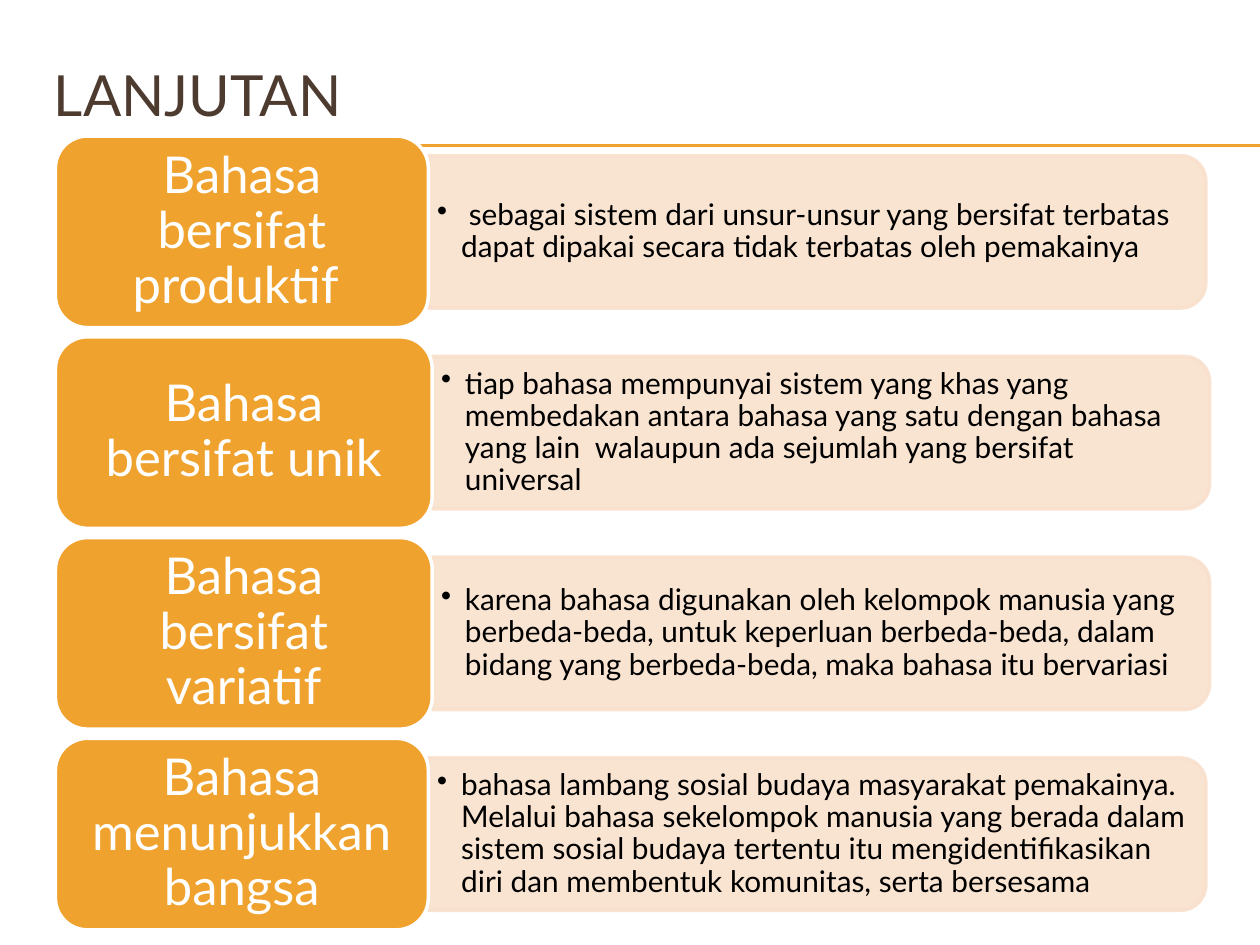
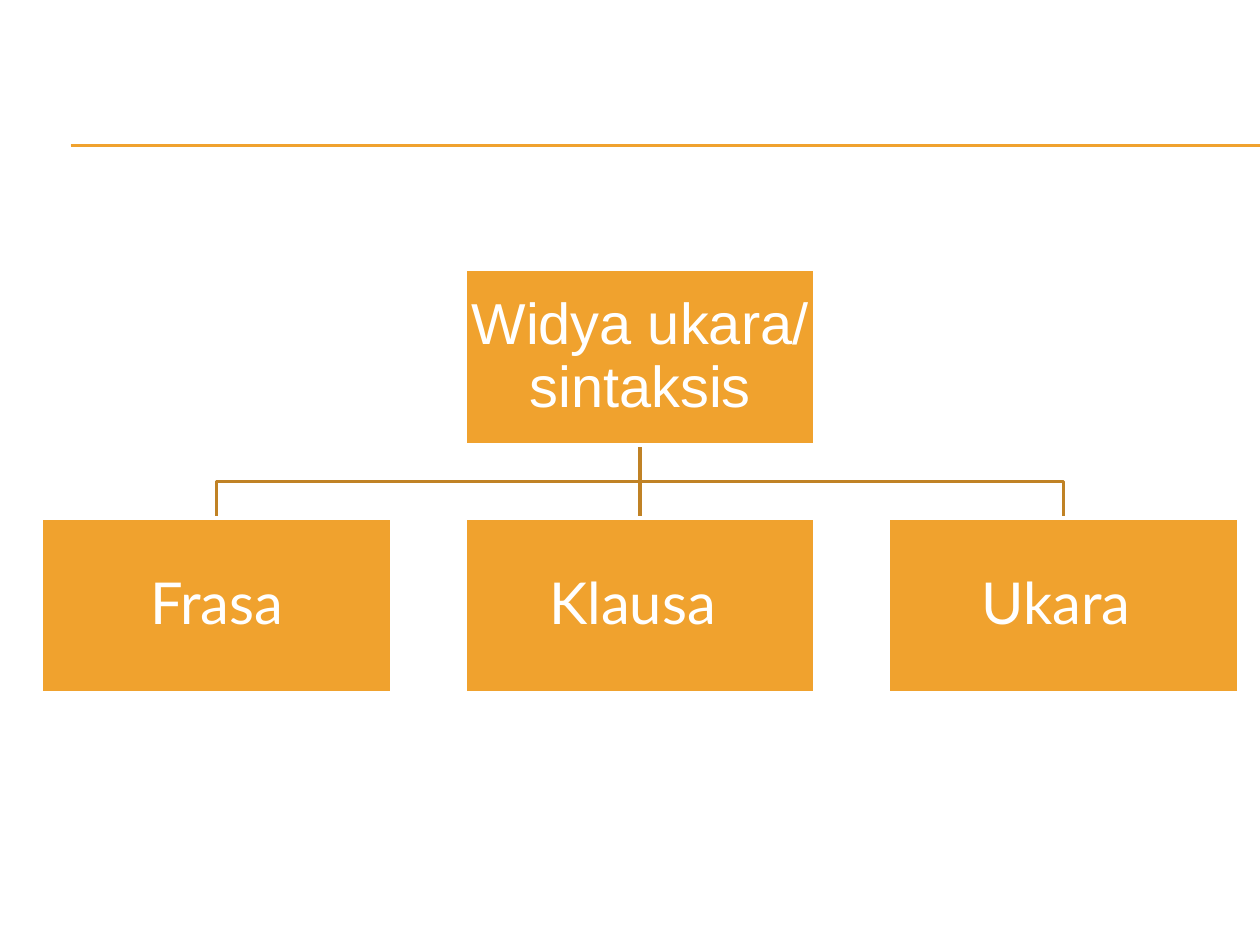
from lxml import etree
from pptx import Presentation
from pptx.dml.color import RGBColor
from pptx.enum.shapes import MSO_CONNECTOR, MSO_SHAPE
from pptx.enum.text import MSO_ANCHOR, PP_ALIGN
from pptx.oxml.ns import qn
from pptx.util import Inches, Pt

STRAIGHT = MSO_CONNECTOR.STRAIGHT
RECTANGLE, ROUNDED, TWO_ROUNDED = MSO_SHAPE.RECTANGLE, MSO_SHAPE.ROUNDED_RECTANGLE, MSO_SHAPE.ROUND_2_SAME_RECTANGLE
LEFT, CENTER = PP_ALIGN.LEFT, PP_ALIGN.CENTER
MIDDLE = MSO_ANCHOR.MIDDLE

ORANGE = RGBColor(0xF0, 0xA2, 0x2E)
DARK_ORANGE = RGBColor(0xC0, 0x82, 0x25)
PEACH = RGBColor(0xF9, 0xE0, 0xCD)
BROWN = RGBColor(0x4E, 0x3B, 0x30)
WHITE = RGBColor(0xFF, 0xFF, 0xFF)
BLACK = RGBColor(0, 0, 0)
FONT = "Lato"


def add_line(page, x1, y1, x2, y2, color, width):
    line = page.shapes.add_connector(STRAIGHT, Inches(x1), Inches(y1), Inches(x2), Inches(y2))
    line.line.color.rgb = color
    line.line.width = Pt(width)
    etree.SubElement(line._element.spPr, qn("a:effectLst"))
    return line


def write_text(box, text, size, color, side, edge, align=CENTER, font=FONT, spacing=0.9):
    frame = box.text_frame
    frame.word_wrap = True
    frame.vertical_anchor = MIDDLE
    frame.margin_left = frame.margin_right = Inches(side)
    frame.margin_top = frame.margin_bottom = Inches(edge)
    para = frame.paragraphs[0]
    para.alignment = align
    para.line_spacing = spacing
    span = para.add_run()
    span.text = text
    span.font.name = font
    span.font.size = Pt(size)
    span.font.color.rgb = color
    return para


deck = Presentation()
deck.slide_width, deck.slide_height = Inches(10), Inches(7.5)

# Both slides carry the double rule under the title area
pages = [deck.slides.add_slide(deck.slide_layouts[6]) for _ in range(2)]
for page in pages:
    for y in (1.15, 1.16):
        add_line(page, 0.56, y, 10, y, ORANGE, 0.75)
traits_page, syntax_page = pages

# Slide 1: title
title = traits_page.shapes.add_textbox(Inches(0.33), Inches(0.5), Inches(9.5), Inches(0.49))
write_text(title, "LANJUTAN", 32.4, BROWN, 0.1, 0.05, LEFT, spacing=1)

# Slide 1: one row per trait of language (label, label width, explanation)
TRAITS = [
    ("Bahasa bersifat produktif ", 2.96,
     " sebagai sistem dari unsur-unsur yang bersifat terbatas dapat dipakai secara "
     "tidak terbatas oleh pemakainya"),
    ("Bahasa bersifat unik", 2.99,
     "tiap bahasa mempunyai sistem yang khas yang  membedakan antara bahasa yang satu "
     "dengan bahasa yang lain  walaupun ada sejumlah yang bersifat universal"),
    ("Bahasa bersifat variatif", 2.99,
     "karena bahasa digunakan oleh kelompok manusia yang berbeda-beda, untuk keperluan "
     "berbeda-beda, dalam bidang yang berbeda-beda, maka bahasa itu bervariasi"),
    ("Bahasa menunjukkan bangsa", 2.96,
     "bahasa lambang sosial budaya masyarakat pemakainya. Melalui bahasa sekelompok manusia "
     "yang berada dalam sistem sosial budaya tertentu itu mengidentifikasikan diri dan "
     "membentuk komunitas, serta bersesama"),
]
LABEL_LEFT, LABEL_HEIGHT = 0.44, 1.52
BAR_LENGTH, BAR_HEIGHT = 6.17, 1.21
NOTE_WIDTH, NOTE_HEIGHT = 6.11, 1.09
FIRST_CENTER, LAST_CENTER = 1.84, 6.62
row_pitch = (LAST_CENTER - FIRST_CENTER) / (len(TRAITS) - 1)

for row, (name, label_width, explanation) in enumerate(TRAITS):
    center = FIRST_CENTER + row * row_pitch
    bar_left = LABEL_LEFT + label_width

    # Upright shape turned a quarter, so its rounded corners face right
    bar = traits_page.shapes.add_shape(
        TWO_ROUNDED,
        Inches(bar_left + (BAR_LENGTH - BAR_HEIGHT) / 2), Inches(center - BAR_LENGTH / 2),
        Inches(BAR_HEIGHT), Inches(BAR_LENGTH))
    bar.rotation = 90
    bar.shadow.inherit = False
    bar.fill.solid()
    bar.fill.fore_color.rgb = PEACH
    bar.line.color.rgb = PEACH
    bar.line.width = Pt(2)
    for color in bar._element.spPr.iter(qn("a:srgbClr")):
        etree.SubElement(color, qn("a:alpha"), val="90000")

    note = traits_page.shapes.add_textbox(
        Inches(bar_left), Inches(center - NOTE_HEIGHT / 2), Inches(NOTE_WIDTH), Inches(NOTE_HEIGHT))
    para = write_text(note, explanation, 17, BLACK, 0.07, 0.04, LEFT)
    settings = para._p.get_or_add_pPr()
    settings.set("marL", str(Inches(0.19)))
    settings.set("indent", str(-Inches(0.19)))
    etree.SubElement(settings, qn("a:buChar"), char="•")

    label = traits_page.shapes.add_shape(
        ROUNDED, Inches(LABEL_LEFT), Inches(center - LABEL_HEIGHT / 2),
        Inches(label_width), Inches(LABEL_HEIGHT))
    label.shadow.inherit = False
    label.fill.solid()
    label.fill.fore_color.rgb = ORANGE
    label.line.color.rgb = WHITE
    label.line.width = Pt(2)
    write_text(label, name, 29, WHITE, 0.12, 0.06)

# Slide 2: tree measures
NODE_WIDTH, NODE_HEIGHT = 2.78, 1.39
CENTERS = (1.72, 5.08, 8.44)
ROOT_TOP, CHILD_TOP = 2.14, 4.11
root_center = CENTERS[1]
root_bottom = ROOT_TOP + NODE_HEIGHT
elbow = (root_bottom + CHILD_TOP) / 2

# Slide 2: branches, behind the nodes
for child_center in (CENTERS[2], CENTERS[0]):
    builder = syntax_page.shapes.build_freeform(Inches(root_center), Inches(root_bottom))
    builder.add_line_segments(
        [(Inches(x), Inches(y)) for x, y in
         ((root_center, elbow), (child_center, elbow), (child_center, CHILD_TOP))], close=False)
    branch = builder.convert_to_shape()
    branch.shadow.inherit = False
    branch.fill.background()
    branch.line.color.rgb = DARK_ORANGE
    branch.line.width = Pt(2)
trunk = add_line(syntax_page, root_center, root_bottom, root_center, CHILD_TOP, DARK_ORANGE, 2)

# Slide 2: nodes
NODES = [
    ("Widya ukara/ sintaksis", root_center, ROOT_TOP, "Arial"),
    ("Frasa", CENTERS[0], CHILD_TOP, FONT),
    ("Klausa ", CENTERS[1], CHILD_TOP, FONT),
    ("Ukara ", CENTERS[2], CHILD_TOP, FONT),
]
nodes = []
for name, center, top, font in NODES:
    node = syntax_page.shapes.add_shape(
        RECTANGLE, Inches(center - NODE_WIDTH / 2), Inches(top),
        Inches(NODE_WIDTH), Inches(NODE_HEIGHT))
    node.shadow.inherit = False
    node.fill.solid()
    node.fill.fore_color.rgb = ORANGE
    node.line.color.rgb = WHITE
    node.line.width = Pt(2)
    write_text(node, name, 33, WHITE, 0.02, 0.02, font=font)
    nodes.append(node)
trunk.begin_connect(nodes[0], 2)
trunk.end_connect(nodes[2], 0)

deck.save("out.pptx")
